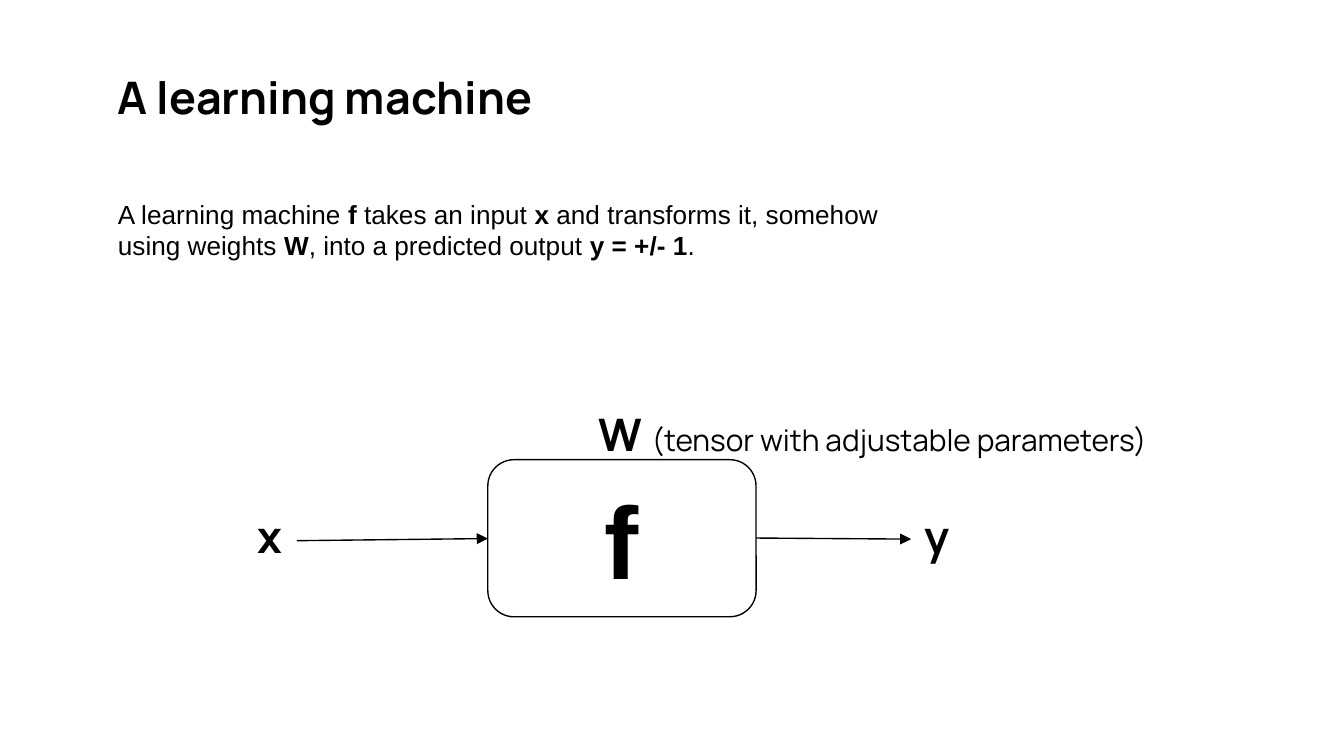
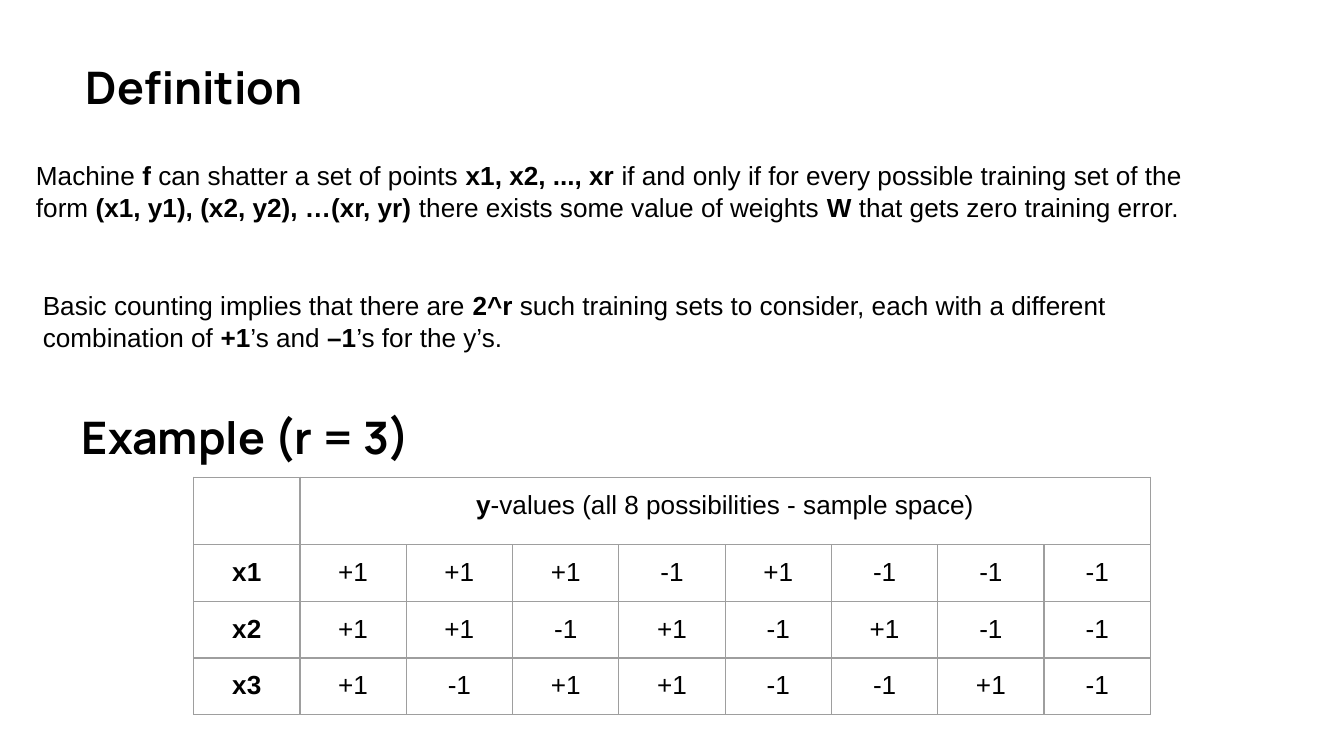
"""Build two slides on learning machines and shattering."""
from lxml import etree
from pptx import Presentation
from pptx import util as u
from pptx.dml import color
from pptx.enum import shapes, text
from pptx.oxml import ns

INK = "000000"
PAPER = "FFFFFF"
GRID = "9E9E9E"
HEAD = ("Manrope", 24)
BODY = ("Arial", 14)
SIGNS = {
    "x1": "+1 +1 +1 -1 +1 -1 -1 -1",
    "x2": "+1 +1 -1 +1 -1 +1 -1 -1",
    "x3": "+1 -1 +1 +1 -1 -1 +1 -1",
}


def paint(code):
    """Return the colour for a hex string."""
    return color.RGBColor.from_string(code)


def place(item, box):
    """Move an item to left, top, width, height in centimetres."""
    item.left, item.top, item.width, item.height = map(u.Cm, box)


def write(frame, words, font, align=text.PP_ALIGN.LEFT, plain=None):
    """Write words, with bold parts between asterisks."""
    name, size = font
    line = frame.paragraphs[0]
    line.alignment = align
    for i, part in enumerate(words.split("*")):
        if part:
            run = line.add_run()
            run.text = part
            run.font.name = name
            run.font.bold = i % 2 == 1
            run.font.size = u.Pt(size if i % 2 else plain or size)
            run.font.color.rgb = paint(INK)


def setup(frame, anchor=text.MSO_ANCHOR.TOP):
    """Give a frame its insets, wrap and anchor."""
    frame.word_wrap = True
    frame.auto_size = text.MSO_AUTO_SIZE.NONE
    frame.vertical_anchor = anchor
    frame.margin_left = frame.margin_right = u.Cm(0.25)
    frame.margin_top = frame.margin_bottom = u.Cm(0.25)


def start(deck, words, box):
    """Add a slide with its title."""
    slide = deck.slides.add_slide(deck.slide_layouts[5])
    slide.background.fill.solid()
    slide.background.fill.fore_color.rgb = paint(PAPER)
    title = slide.shapes.title
    place(title, box)
    setup(title.text_frame)
    write(title.text_frame, f"*{words}*", HEAD)
    return slide


def label(slide, words, box, font=BODY, plain=None):
    """Add a text box."""
    item = slide.shapes.add_textbox(*map(u.Cm, box))
    setup(item.text_frame)
    write(item.text_frame, words, font, plain=plain)


def block(slide, words, box):
    """Add the rounded box of the machine."""
    item = slide.shapes.add_shape(
        shapes.MSO_SHAPE.ROUNDED_RECTANGLE, *map(u.Cm, box))
    item.shadow.inherit = False
    item.fill.solid()
    item.fill.fore_color.rgb = paint(PAPER)
    item.line.color.rgb = paint(INK)
    item.line.width = u.Pt(0.75)
    setup(item.text_frame, text.MSO_ANCHOR.MIDDLE)
    write(item.text_frame, f"*{words}*", ("Arial", 55), text.PP_ALIGN.CENTER)


def arrow(slide, *ends):
    """Add an arrow between two points."""
    item = slide.shapes.add_connector(
        shapes.MSO_CONNECTOR.STRAIGHT, *map(u.Cm, ends))
    item.line.color.rgb = paint(INK)
    item.line.width = u.Pt(0.75)
    stroke = item.line._get_or_add_ln()
    etree.SubElement(stroke, ns.qn("a:tailEnd"), type="triangle")
    etree.SubElement(item._element.spPr, ns.qn("a:effectLst"))


def border(cell):
    """Draw the four grid lines of a cell."""
    props = cell._tc.get_or_add_tcPr()
    for i, side in enumerate("LRTB"):
        edge = etree.Element(ns.qn(f"a:ln{side}"), w=str(u.Pt(0.75)))
        fill = etree.SubElement(edge, ns.qn("a:solidFill"))
        etree.SubElement(fill, ns.qn("a:srgbClr"), val=GRID)
        props.insert(i, edge)


def grid(slide, left, top, wide, tall, first):
    """Add the table of signs under a merged heading."""
    rows = [["", "*y*-values (all 8 possibilities - sample space)"] + [""] * 7]
    rows += [[f"*{key}*"] + row.split() for key, row in SIGNS.items()]
    count = len(rows[0])
    table = slide.shapes.add_table(
        len(rows), count, u.Cm(left), u.Cm(top),
        u.Cm(wide * count), u.Cm(first + tall * len(SIGNS))).table
    table.first_row = table.horz_banding = False
    for col in table.columns:
        col.width = u.Cm(wide)
    for r, row in enumerate(rows):
        table.rows[r].height = u.Cm(tall if r else first)
        for c, words in enumerate(row):
            cell = table.cell(r, c)
            cell.fill.background()
            border(cell)
            cell.margin_left = cell.margin_right = u.Cm(0.25)
            cell.margin_top = cell.margin_bottom = u.Cm(0.25)
            write(cell.text_frame, words, BODY, text.PP_ALIGN.CENTER)
    table.cell(0, 1).merge(table.cell(0, count - 1))


def machine(deck):
    """Build the slide with the machine diagram."""
    slide = start(deck, "A learning machine", (1.98, 1.07, 21.41, 1.32))
    label(slide, "A learning machine *f* takes an input *x* and transforms "
          "it, somehow using weights *W*, into a predicted output "
          "*y = +/- 1*.", (1.98, 3.5, 15.19, 1.7))
    block(slide, "f", (9.22, 8.69, 5.07, 2.97))
    arrow(slide, 5.61, 10.22, 9.22, 10.18)
    arrow(slide, 14.29, 10.17, 17.22, 10.19)
    for name, left in (("x", 4.62), ("y", 17.22)):
        label(slide, f"*{name}*", (left, 9.37, 0.97, 0.97), HEAD)
    label(slide, "*W *(tensor with adjustable parameters)",
          (11.07, 7.44, 12.73, 0.97), HEAD, 16)


def shatter(deck):
    """Build the slide with the definition and its example."""
    slide = start(deck, "Definition", (1.37, 0.88, 21.41, 1.32))
    label(slide, "Machine *f* can shatter a set of points *x1, x2, ..., xr* "
          "if and only if for every possible training set of the form "
          "*(x1, y1), (x2, y2), …(xr, yr)* there exists some value of "
          "weights *W* that gets zero training error.",
          (0.43, 2.77, 23.04, 1.7))
    label(slide, "Basic counting implies that there are *2^r* such training "
          "sets to consider, each with a different combination of *+1*’s "
          "and *–1*’s for the y’s.", (0.56, 5.23, 23.04, 1.7))
    label(slide, "*Example (r = 3)*", (1.3, 7.5, 21.41, 1.32), HEAD)
    grid(slide, 3.66, 9.02, 2.01, 1.07, 1.21)


def main():
    """Build and save the deck."""
    deck = Presentation()
    deck.slide_width, deck.slide_height = u.Cm(25.4), u.Cm(14.29)
    machine(deck)
    shatter(deck)
    deck.save("out.pptx")


if __name__ == "__main__":
    main()
